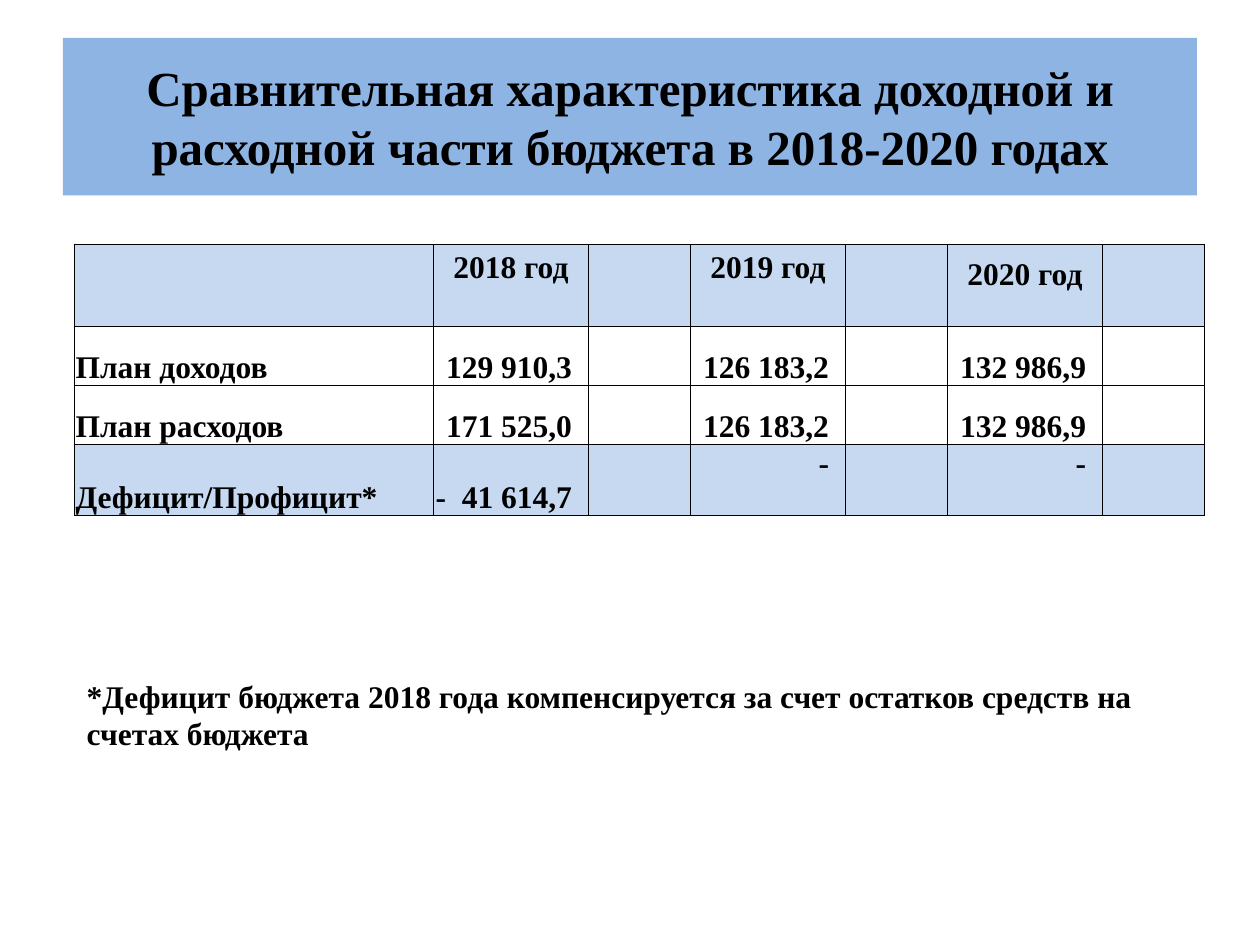
from dataclasses import dataclass

from lxml import etree
from pptx import Presentation
from pptx.dml.color import RGBColor
from pptx.enum.shapes import MSO_SHAPE
from pptx.enum.text import MSO_ANCHOR, PP_ALIGN
from pptx.oxml.ns import qn
from pptx.util import Inches, Pt

RECTANGLE = MSO_SHAPE.RECTANGLE
TOP, MIDDLE, BOTTOM = MSO_ANCHOR.TOP, MSO_ANCHOR.MIDDLE, MSO_ANCHOR.BOTTOM
LEFT, CENTER, RIGHT = PP_ALIGN.LEFT, PP_ALIGN.CENTER, PP_ALIGN.RIGHT


@dataclass(frozen=True)
class Theme:
    font: str = "Times New Roman"
    ink: str = "000000"
    banner: str = "8EB4E3"
    band: str = "C6D9F1"
    title_size: int = 28
    body_size: int = 18
    border: int = 1


@dataclass(frozen=True)
class CellLayout:
    align: PP_ALIGN
    anchor: MSO_ANCHOR
    margins: tuple  # left, top, right, bottom in inches


HEADER = CellLayout(CENTER, TOP, (0.1, 0.05, 0.1, 0.05))
RAISED_HEADER = CellLayout(CENTER, BOTTOM, (0.01, 0.01, 0.01, 0.27))
LABEL = CellLayout(LEFT, BOTTOM, (0.01, 0.01, 0.01, 0))
AMOUNT = CellLayout(RIGHT, BOTTOM, (0, 0.01, 0.13, 0))
DASH = CellLayout(RIGHT, TOP, (0, 0.01, 0.13, 0))


class BudgetSlide:
    def __init__(self, slide, theme):
        self.slide = slide
        self.theme = theme

    def set_text(self, frame, text, size, align):
        frame.text = text
        paragraph = frame.paragraphs[0]
        paragraph.alignment = align
        paragraph.font.size = Pt(size)
        for run in paragraph.runs:
            run.font.name = self.theme.font
            run.font.size = Pt(size)
            run.font.bold = True
            run.font.color.rgb = RGBColor.from_string(self.theme.ink)

    def banner(self, text, *box):
        banner = self.slide.shapes.add_shape(RECTANGLE, *map(Inches, box))
        banner.shadow.inherit = False
        banner.fill.solid()
        banner.fill.fore_color.rgb = RGBColor.from_string(self.theme.banner)
        banner.line.fill.background()
        banner.text_frame.vertical_anchor = MIDDLE
        self.set_text(banner.text_frame, text, self.theme.title_size, CENTER)

    def note(self, text, *box):
        note = self.slide.shapes.add_textbox(*map(Inches, box))
        note.text_frame.word_wrap = True
        self.set_text(note.text_frame, text, self.theme.body_size, LEFT)

    def table(self, rows, left, top, widths, heights, banded_rows):
        table = self.slide.shapes.add_table(
            len(heights), len(widths), Inches(left), Inches(top),
            Inches(sum(widths)), Inches(sum(heights))).table
        for column, width in zip(table.columns, widths):
            column.width = Inches(width)
        for row, height in zip(table.rows, heights):
            row.height = Inches(height)
        for r, row in enumerate(rows):
            for c, (text, layout) in enumerate(row):
                self.cell(table.cell(r, c), text, layout, r in banded_rows)

    def cell(self, cell, text, layout, banded):
        self.set_text(cell.text_frame, text, self.theme.body_size, layout.align)
        cell.vertical_anchor = layout.anchor
        (cell.margin_left, cell.margin_top,
         cell.margin_right, cell.margin_bottom) = map(Inches, layout.margins)
        self.borders(cell)
        if banded:
            cell.fill.solid()
            cell.fill.fore_color.rgb = RGBColor.from_string(self.theme.band)
        else:
            cell.fill.background()

    def borders(self, cell):
        properties = cell._tc.get_or_add_tcPr()
        for side in ("a:lnL", "a:lnR", "a:lnT", "a:lnB"):
            line = etree.SubElement(properties, qn(side),
                                    w=str(Pt(self.theme.border)))
            fill = etree.SubElement(line, qn("a:solidFill"))
            etree.SubElement(fill, qn("a:srgbClr"), val=self.theme.ink)


def spaced(cells):
    """Follow each year's cell with the empty column beside it."""
    return [part for cell in cells for part in (cell, ("", HEADER))]


def main():
    presentation = Presentation()
    presentation.slide_width = Inches(10)
    presentation.slide_height = Inches(7.5)
    blank = presentation.slide_layouts[6]
    budget = BudgetSlide(presentation.slides.add_slide(blank), Theme())

    # Title banner
    budget.banner("Сравнительная характеристика доходной и расходной части "
                  "бюджета в 2018-2020 годах", 0.5, 0.3, 9, 1.25)

    # Income and spending by year
    years = [("2018 год", HEADER), ("2019 год", HEADER),
             ("2020 год", RAISED_HEADER)]
    rows = [[("", HEADER)] + spaced(years)]
    plans = [
        ("План доходов", ("129 910,3", "126 183,2", "132 986,9")),
        ("План расходов", ("171 525,0", "126 183,2", "132 986,9")),
        ("Дефицит/Профицит*", ("-  41 614,7", "-", "-")),
    ]
    for label, amounts in plans:
        cells = [(amount, DASH if amount == "-" else AMOUNT)
                 for amount in amounts]
        rows.append([(label, LABEL)] + spaced(cells))
    budget.table(rows, 0.59, 1.94, widths=[2.85] + [1.23, 0.81] * 3,
                 heights=[0.65, 0.47, 0.47, 0.56], banded_rows=(0, 3))

    # Footnote
    budget.note("*Дефицит бюджета 2018 года компенсируется за счет остатков "
                "средств на счетах бюджета", 0.59, 5.32, 9.06, 0.71)

    presentation.save("out.pptx")


if __name__ == "__main__":
    main()
